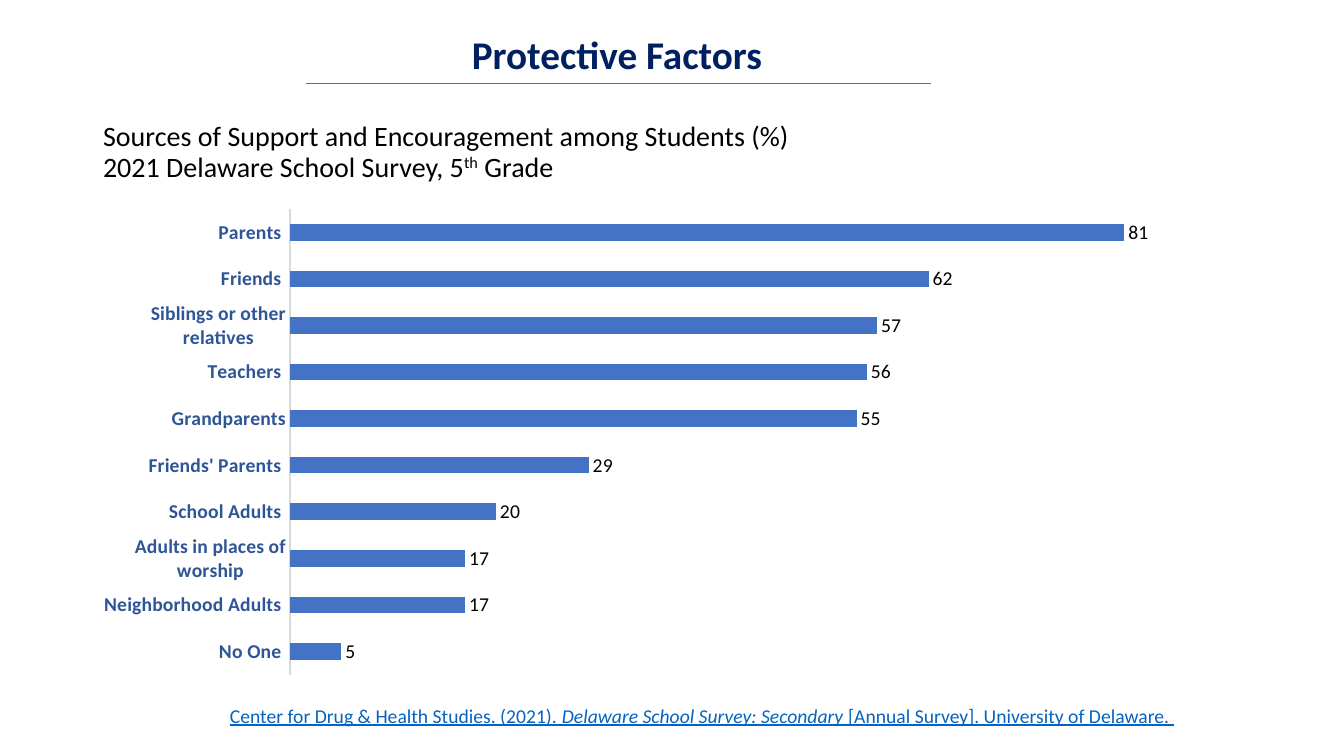
import dataclasses

import lxml.etree
import pptx
import pptx.chart.data
import pptx.dml.color
import pptx.enum.chart
import pptx.enum.shapes
import pptx.enum.text
import pptx.oxml.ns
import pptx.util

PIXEL = 914400 / 100.8


def px(length):
    return pptx.util.Emu(round(length * PIXEL))


def color(value):
    return pptx.dml.color.RGBColor.from_string(value)


@dataclasses.dataclass(frozen=True)
class Theme:
    font: str = "Calibri"
    text: str = "000000"
    heading: str = "002060"
    accent: str = "4472C4"
    category: str = "2F5597"
    axis: str = "D9D9D9"
    link: str = "0563C1"
    heading_size: int = 28
    title_size: int = 20
    body_size: int = 14


class SlideBuilder:
    def __init__(self, presentation, theme):
        self.theme = theme
        self.slide = presentation.slides.add_slide(presentation.slide_layouts[5])

    def style(self, font, size, fill, bold=False):
        font.name = self.theme.font
        font.size = pptx.util.Pt(size)
        font.bold = bold
        font.color.rgb = color(fill)

    def title(self, box, lines, superscript, ending):
        title = self.slide.shapes.title
        title.left, title.top, title.width, title.height = map(px, box)
        frame = title.text_frame
        frame.word_wrap = True
        frame.auto_size = pptx.enum.text.MSO_AUTO_SIZE.NONE
        frame.vertical_anchor = pptx.enum.text.MSO_ANCHOR.MIDDLE
        paragraph = frame.paragraphs[0]
        paragraph.alignment = pptx.enum.text.PP_ALIGN.LEFT
        paragraph.line_spacing = 0.9
        self.style(paragraph.font, self.theme.title_size, self.theme.text)
        paragraph.text = "\v".join(lines)
        raised = paragraph.add_run()
        raised.text = superscript
        raised.font._element.set("baseline", "30000")
        paragraph.add_run().text = ending

    def text(self, box, pieces, size, fill, bold=False):
        shape = self.slide.shapes.add_textbox(*map(px, box))
        frame = shape.text_frame
        frame.word_wrap = True
        frame.auto_size = pptx.enum.text.MSO_AUTO_SIZE.SHAPE_TO_FIT_TEXT
        paragraph = frame.paragraphs[0]
        self.style(paragraph.font, size, fill, bold)
        for words, italic in pieces:
            run = paragraph.add_run()
            run.text = words
            if italic:
                run.font.italic = True
        return paragraph

    def line(self, start, end):
        connector = self.slide.shapes.add_connector(
            pptx.enum.shapes.MSO_CONNECTOR.STRAIGHT, *map(px, start + end))
        connector.line.color.rgb = color(self.theme.accent)
        connector.line.width = pptx.util.Pt(0.5)
        lxml.etree.SubElement(connector._element.spPr, pptx.oxml.ns.qn("a:effectLst"))

    def bar_chart(self, box, values, maximum, plot):
        data = pptx.chart.data.CategoryChartData(number_format="0")
        data.categories = list(values)
        data.add_series("Series 1", values.values())
        chart = self.slide.shapes.add_chart(
            pptx.enum.chart.XL_CHART_TYPE.BAR_CLUSTERED, *map(px, box), data).chart
        chart.has_legend = False
        chart.has_title = False
        self.style(chart.font, self.theme.body_size, self.theme.text)

        bars = chart.plots[0]
        bars.gap_width = 182
        bars.vary_by_categories = False
        series = bars.series[0]
        series.format.fill.solid()
        series.format.fill.fore_color.rgb = color(self.theme.accent)
        labels = series.data_labels
        labels.show_value = True
        labels.position = pptx.enum.chart.XL_LABEL_POSITION.OUTSIDE_END
        labels.number_format = "#,##0"
        labels.number_format_is_linked = False
        self.style(labels.font, self.theme.body_size, self.theme.text)

        categories = chart.category_axis
        categories.major_tick_mark = pptx.enum.chart.XL_TICK_MARK.NONE
        categories.format.line.color.rgb = color(self.theme.axis)
        categories.format.line.width = pptx.util.Pt(0.75)
        self.style(categories.tick_labels.font, self.theme.body_size,
                   self.theme.category, bold=True)
        scale = chart.value_axis
        scale.minimum_scale = 0
        scale.maximum_scale = maximum
        scale.has_major_gridlines = False
        scale.visible = False
        self.place_plot(chart, plot)

    def place_plot(self, chart, plot):
        qn = pptx.oxml.ns.qn
        area = chart._chartSpace.chart.plotArea
        for existing in area.findall(qn("c:layout")):
            area.remove(existing)
        layout = lxml.etree.Element(qn("c:layout"))
        area.insert(0, layout)
        manual = lxml.etree.SubElement(layout, qn("c:manualLayout"))
        settings = [("layoutTarget", "inner"), ("xMode", "edge"), ("yMode", "edge")]
        settings += zip("xywh", map(str, plot))
        for name, value in settings:
            lxml.etree.SubElement(manual, qn("c:" + name)).set("val", value)


def main():
    presentation = pptx.Presentation()
    presentation.slide_width = px(1344)
    presentation.slide_height = px(756)
    theme = Theme()
    builder = SlideBuilder(presentation, theme)

    builder.title(
        (93, 119, 1159, 68),
        ["Sources of Support and Encouragement among Students (%)",
         "2021 Delaware School Survey, 5"],
        "th", " Grade")
    builder.text((462, 25, 326, 57), [("Protective Factors", False)],
                 theme.heading_size, theme.heading, bold=True)
    builder.line((306, 83), (931, 83))

    citation = builder.text(
        (214, 697, 990, 34),
        [("Center for Drug & Health Studies. (2021). ", False),
         ("Delaware School Survey: Secondary", True),
         (" [Annual Survey]. University of Delaware. ", False)],
        theme.body_size, theme.link)
    citation.font.underline = True
    citation.line_spacing = 1.07
    citation._p.get_or_add_pPr().set("marL", str(px(6)))

    support = {
        "No One ": 5,
        "Neighborhood Adults ": 17,
        "Adults in places of worship": 17,
        "School Adults ": 20,
        "Friends' Parents ": 29,
        "Grandparents": 55,
        "Teachers ": 56,
        "Siblings or other relatives": 57,
        "Friends ": 62,
        "Parents ": 81,
    }
    builder.bar_chart((93, 202, 1159, 480), support, 90, (0.17, 0.015, 0.8, 0.97))
    presentation.save("out.pptx")


if __name__ == "__main__":
    main()
